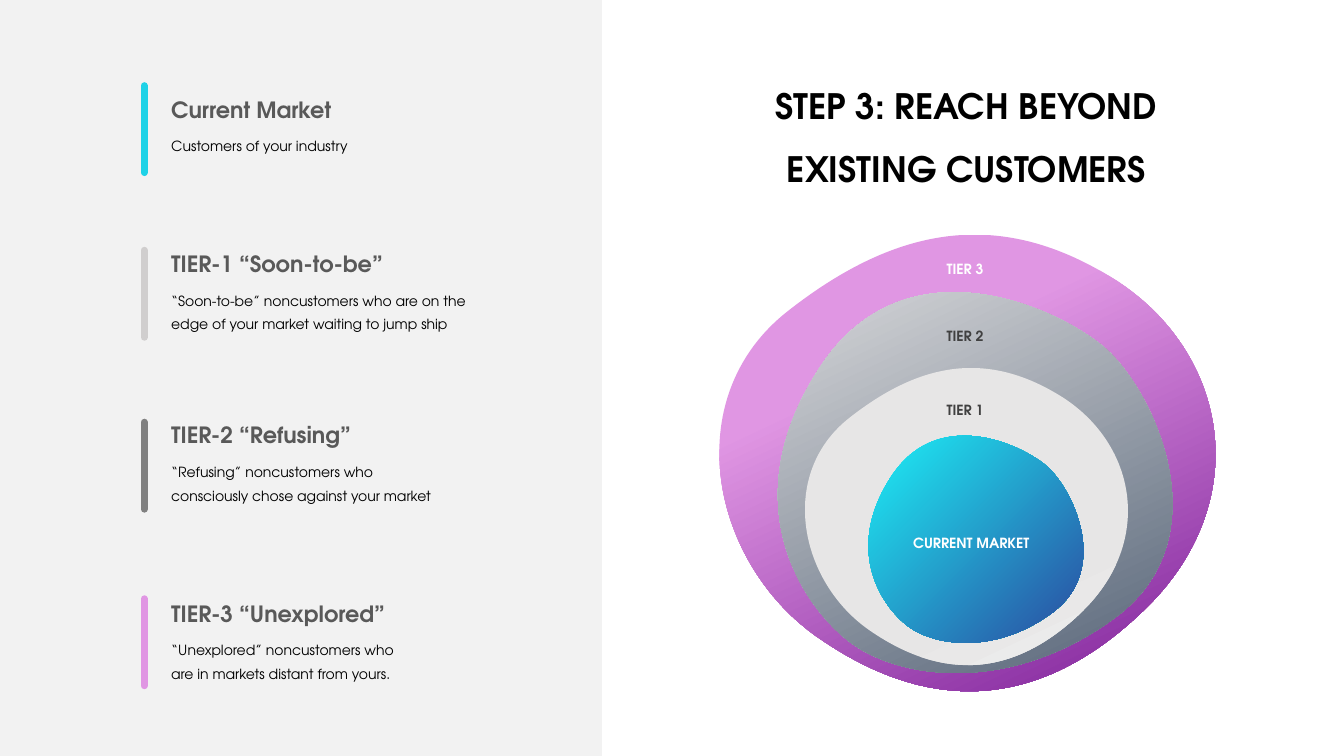
from dataclasses import dataclass

from lxml.etree import SubElement
from pptx import Presentation
from pptx.dml.color import RGBColor as RGB
from pptx.enum.shapes import MSO_CONNECTOR as CONN, MSO_SHAPE as SHAPE
from pptx.enum.text import MSO_AUTO_SIZE as FIT, PP_ALIGN as ALIGN
from pptx.oxml.ns import qn
from pptx.util import Pt


@dataclass(frozen=True)
class Theme:
    font: str = "TeX Gyre Adventor"
    panel: str = "F2F2F2"
    black: str = "000000"
    white: str = "FFFFFF"
    heading: str = "595959"
    label: str = "404040"
    cyan: str = "1FD2E7"
    silver: str = "D0CECE"
    gray: str = "808080"
    pink: str = "E096E3"
    purple: str = "892EA2"
    mist: str = "E7E6E6"
    slate: str = "44546A"
    navy: str = "2D3192"
    aqua: str = "1BFEFE"
    title_size: float = 25
    heading_size: float = 16
    body_size: float = 10


# Closed outlines in percent of their box: each row is one curve
# (first control point, second control point, end point).
PEBBLE = [
    [(19.7, 7.97), (39.19, -2.8), (67.02, 3.45)],
    [(94.86, 9.91), (110.92, 37.72), (96.79, 67.24)],
    [(82.66, 96.55), (60.39, 104.09), (33.62, 96.98)],
    [(6.64, 89.87), (-12.21, 59.05), (3.85, 33.4)],
]
EGG = [
    [(12.08, -4.92), (53.98, -1.81), (69.41, 3.89)],
    [(84.83, 9.59), (114.4, 39.12), (95.89, 67.88)],
    [(77.12, 96.63), (48.07, 102.59), (32.65, 96.89)],
    [(17.22, 91.19), (-5.91, 72.02), (3.08, 33.68)],
]


class Deck:
    def __init__(self, theme):
        self.theme = theme
        self.prs = Presentation()
        self.prs.slide_width, self.prs.slide_height = Pt(960), Pt(540)
        self.slide = self.prs.slides.add_slide(self.prs.slide_layouts[6])

    def panel(self, x, y, w, h, color):
        sp = self.slide.shapes.add_shape(SHAPE.RECTANGLE, Pt(x), Pt(y), Pt(w), Pt(h))
        sp.shadow.inherit = False
        sp.fill.solid()
        sp.fill.fore_color.rgb = RGB.from_string(color)
        sp.line.fill.background()

    def ring(self, outline, box, stops, radial=False):
        """Draw a tilted curved outline with a two-stop gradient."""
        anchors = [curve[-1] for curve in outline]
        builder = self.slide.shapes.build_freeform(*anchors[-1], scale=Pt(1))
        builder.add_line_segments(anchors, close=True)
        sp = builder.convert_to_shape()
        sp.left, sp.top, sp.width, sp.height = map(Pt, box)
        sp.rotation = 19.8
        sp.shadow.inherit = False
        sp.line.fill.background()

        geometry = sp._element.find(".//" + qn("a:path"))
        geometry.set("w", "10000")
        geometry.set("h", "10000")

        def place(pt, point):
            for axis, value in zip("xy", point):
                pt.set(axis, str(round(value * 100)))

        place(geometry.find(qn("a:moveTo"))[0], anchors[-1])
        for line in geometry.findall(qn("a:lnTo")):
            geometry.remove(line)
        close = geometry.find(qn("a:close"))
        for curve in outline:
            bezier = SubElement(geometry, qn("a:cubicBezTo"))
            for point in curve:
                place(SubElement(bezier, qn("a:pt")), point)
        geometry.append(close)

        sp.fill.gradient()
        sp.fill.gradient_angle = 315
        for stop, (position, color) in zip(sp.fill.gradient_stops, stops):
            stop.position = position / 100
            stop.color.rgb = RGB.from_string(color)
        if radial:
            grad = sp._element.spPr.find(qn("a:gradFill"))
            grad.remove(grad.find(qn("a:lin")))
            focus = SubElement(grad, qn("a:path"), path="circle")
            SubElement(focus, qn("a:fillToRect"), l="100000", t="100000")

    def text(self, box, lines, align=ALIGN.LEFT, spacing=None, after=None, wrap=True):
        """Add a text box; lines holds (text, size, color, bold) tuples."""
        tf = self.slide.shapes.add_textbox(*map(Pt, box)).text_frame
        tf.word_wrap = wrap
        tf.auto_size = FIT.SHAPE_TO_FIT_TEXT
        for i, (text, size, color, bold) in enumerate(lines):
            p = tf.add_paragraph() if i else tf.paragraphs[0]
            p.text = text
            p.alignment = align
            if spacing is not None:
                p.line_spacing = spacing
            if after is not None:
                p.space_after = Pt(after)
            p.font.name = self.theme.font
            p.font.size = Pt(size)
            p.font.bold = bold
            p.font.color.rgb = RGB.from_string(color)

    def bar(self, x, y, length, color):
        cxn = self.slide.shapes.add_connector(
            CONN.STRAIGHT, Pt(x), Pt(y), Pt(x), Pt(y + length))
        cxn.line.width = Pt(5)
        cxn.line.color.rgb = RGB.from_string(color)
        cxn._element.spPr.find(qn("a:ln")).set("cap", "rnd")
        SubElement(cxn._element.spPr, qn("a:effectLst"))

    def entry(self, y, w, h, heading, body, wrap=True):
        t = self.theme
        self.text((115.2, y, w, h),
                  [(heading, t.heading_size, t.heading, True),
                   (body, t.body_size, t.black, False)],
                  spacing=Pt(17), after=6, wrap=wrap)

    def ring_label(self, x, y, w, text, color):
        self.text((x, y, w, 19.4), [(text, self.theme.body_size, color, True)],
                  align=ALIGN.CENTER, wrap=False)


def main():
    t = Theme()
    deck = Deck(t)
    deck.panel(0, -0.7, 430, 540.7, t.panel)

    deck.ring(PEBBLE, (522, 159.84, 336.24, 334.08), [(35, t.pink), (83, t.purple)])
    deck.ring(EGG, (553.68, 210.96, 280.08, 277.92), [(0, t.mist), (100, t.slate)])
    deck.ring(PEBBLE, (580.32, 257.76, 218.88, 217.44), [(66, t.mist), (98, t.panel)])
    deck.ring(EGG, (619.2, 312.48, 152.64, 151.2), [(0, t.navy), (96, t.aqua)],
              radial=True)

    deck.entry(67, 142, 45.4, "Current Market", "Customers of your industry", wrap=False)
    for y, w, heading, body in [
        (177.1, 242, "TIER-1 “Soon-to-be”",
         "“Soon-to-be” noncustomers who are on the edge of your market "
         "waiting to jump ship"),
        (299.5, 206.6, "TIER-2 “Refusing”",
         "“Refusing” noncustomers who consciously chose against your market"),
        (427, 190.8, "TIER-3 “Unexplored”",
         "“Unexplored” noncustomers who are in markets distant from yours."),
    ]:
        deck.entry(y, w, 62.6, heading, body)

    deck.text((535.7, 41.8, 308.9, 67.7),
              [("STEP 3: REACH BEYOND EXISTING CUSTOMERS", t.title_size, t.black, True)],
              align=ALIGN.CENTER, spacing=1.5)

    deck.ring_label(643.7, 378, 100, "CURRENT MARKET", t.white)
    for y, text, color in [(283.4, "TIER 1", t.label), (230.4, "TIER 2", t.label),
                           (182.2, "TIER 3", t.white)]:
        deck.ring_label(668.9, y, 41, text, color)

    for y, color in [(61.2, t.cyan), (178.8, t.silver), (301.6, t.gray), (427.7, t.pink)]:
        deck.bar(103, y, 62.1, color)

    deck.prs.save("out.pptx")


if __name__ == "__main__":
    main()
